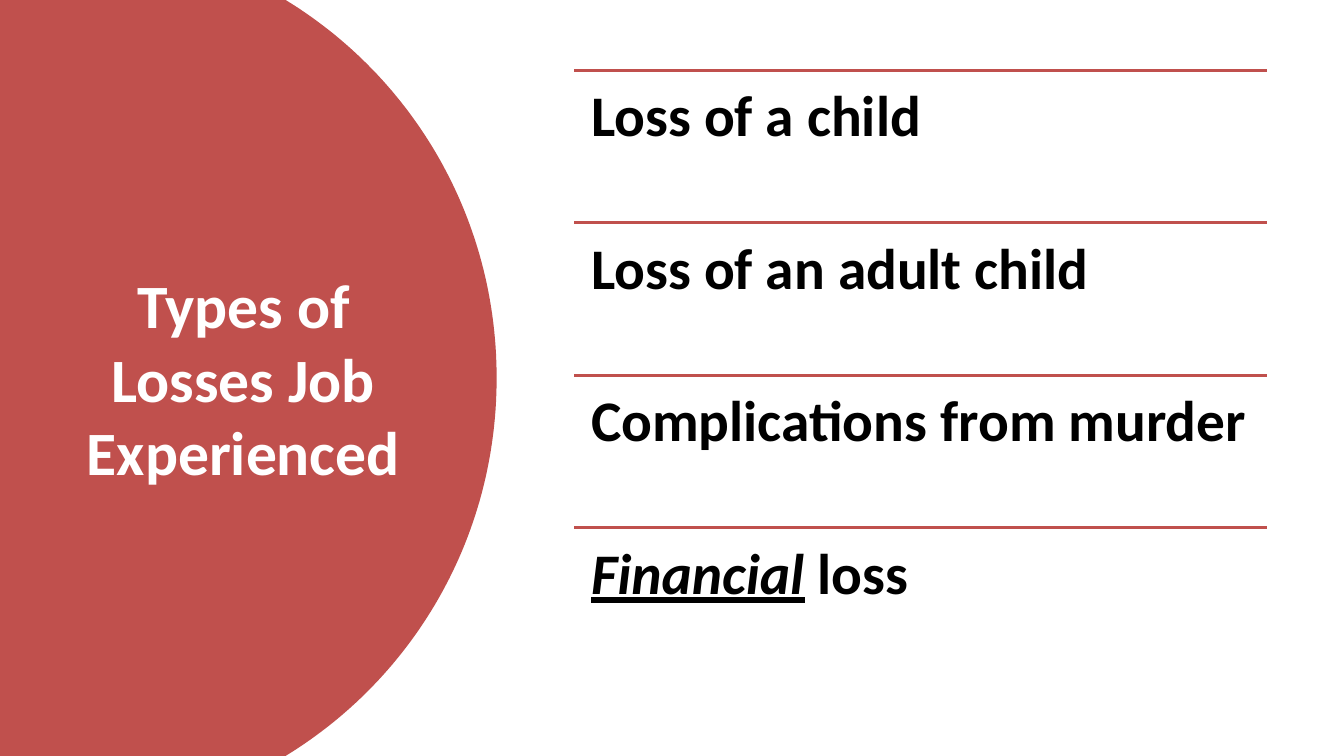
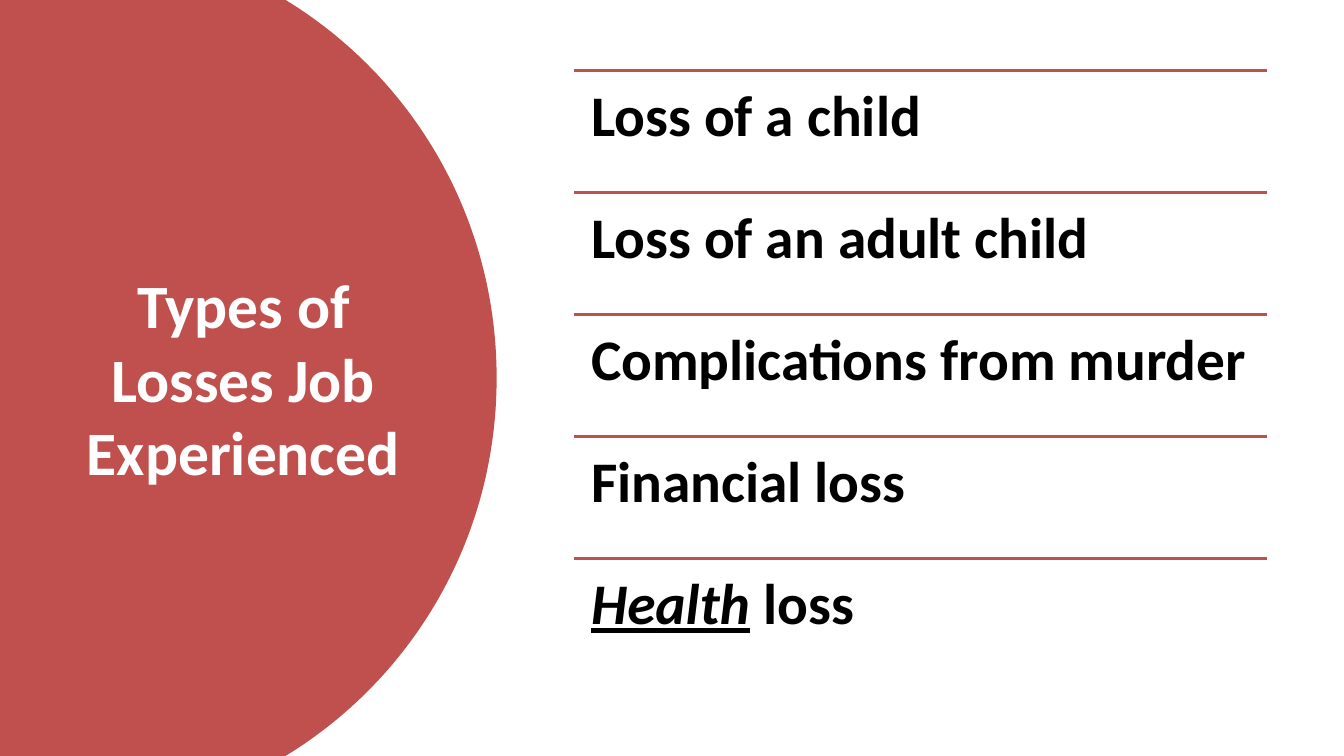
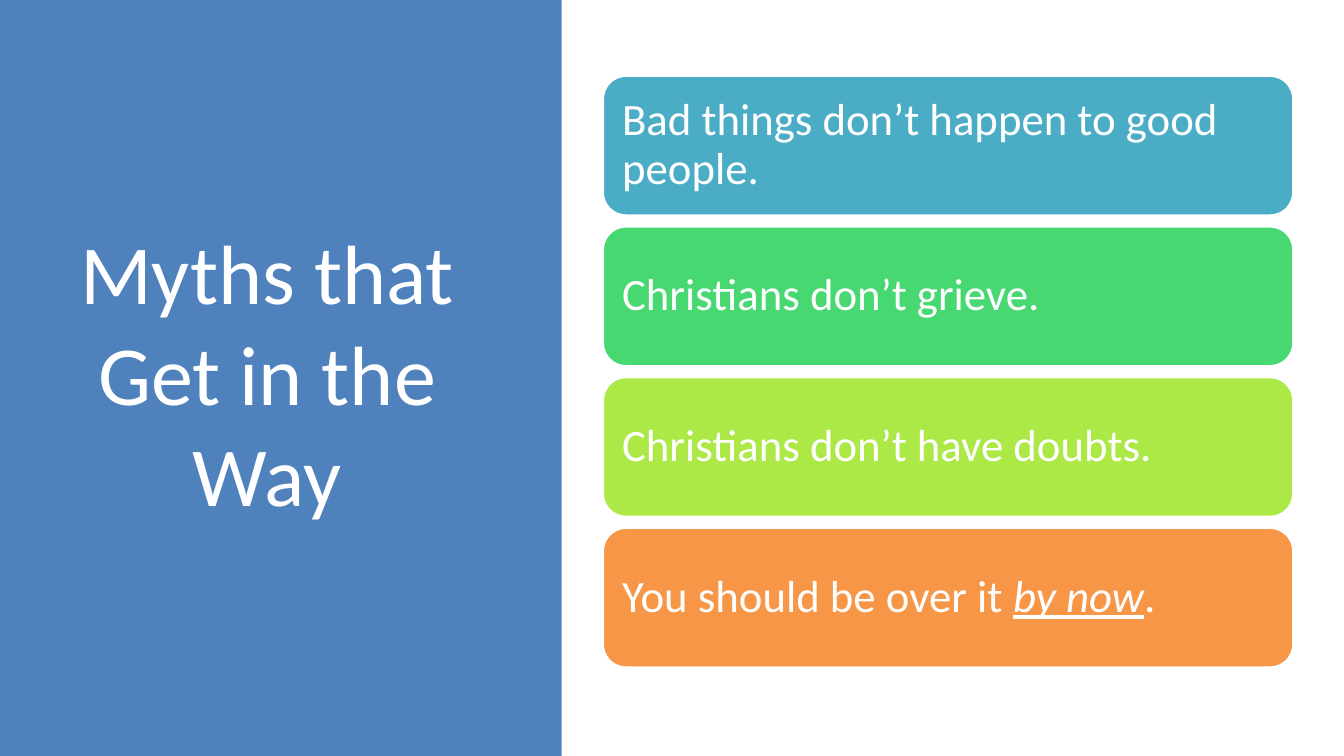
"""Builds three slides: two lists of losses beside a curved panel, and a set of myth cards."""
from lxml.etree import SubElement
from pptx import Presentation
from pptx.dml.color import RGBColor
from pptx.enum.shapes import MSO_CONNECTOR, MSO_SHAPE
from pptx.enum.text import MSO_ANCHOR, PP_ALIGN
from pptx.oxml.ns import qn
from pptx.util import Emu, Pt

LOSS_TITLE = "Types of Losses Job Experienced"
LOSS_LISTS = [
    ["Loss of a child", "Loss of an adult child", "Complications from murder", "*Financial* loss"],
    ["Loss of a child", "Loss of an adult child", "Complications from murder", "Financial loss",
     "*Health* loss"],
]
MYTH_TITLE = "Myths that Get in the Way"
MYTHS = [
    ("Bad things don’t happen to good people.", "teal"),
    ("Christians don’t grieve.", "green"),
    ("Christians don’t have doubts.", "lime"),
    ("You should be over it *by now*.", "orange"),
]

COLORS = {
    "red": "C0504D", "blue": "4F81BD", "teal": "4BACC6", "green": "47D872",
    "lime": "ACE946", "orange": "F79646", "white": "FFFFFF", "black": "000000",
}
FONT = "Calibri"
PX = 9525
W, H = 1280, 720
CURVE = [(272, 0), (393, 74), (473, 207), (473, 360)]
CURVE_STEPS = 60
LOSS_TITLE_BOX = (56, 67, 352, 585)
MYTH_TITLE_BOX = (55, 65, 399, 578)
LOSS_AREA = (547, 67, 660, 581)
MYTH_AREA = (574, 72, 658, 564)
CARD_GAP = 10
PANEL_W = 535


def px(*values):
    return [Emu(round(v * PX)) for v in values]


def color(name):
    return RGBColor.from_string(COLORS[name])


def write(sp, text, size, fill="white", bold=False, align=PP_ALIGN.LEFT,
          anchor=MSO_ANCHOR.MIDDLE, inset=(10, 5), spacing=None):
    tf = sp.text_frame
    tf.word_wrap = True
    tf.vertical_anchor = anchor
    tf.margin_left = tf.margin_right = px(inset[0])[0]
    tf.margin_top = tf.margin_bottom = px(inset[1])[0]
    p = tf.paragraphs[0]
    p.alignment = align
    p.line_spacing = spacing
    for i, part in enumerate(text.split("*")):
        if part:
            r = p.add_run()
            r.text = part
            font = r.font
            font.name, font.size, font.bold = FONT, Pt(size), bold
            font.color.rgb = color(fill)
            if i % 2:
                font.italic = font.underline = True


def paint(sp, fill, line=None):
    sp.shadow.inherit = False
    sp.fill.solid()
    sp.fill.fore_color.rgb = color(fill)
    if line:
        sp.line.color.rgb = color(line)
        sp.line.width = Pt(2)
    else:
        sp.line.fill.background()


def add_title(s, text, box, size, bold=False):
    write(s.shapes.add_textbox(*px(*box)), text, size, bold=bold, align=PP_ALIGN.CENTER)


def add_rule(s, x, y, w):
    rule = s.shapes.add_connector(MSO_CONNECTOR.STRAIGHT, *px(x, y, x + w, y))
    rule.line.color.rgb = color("red")
    rule.line.width = Pt(2)
    SubElement(rule._element.spPr, qn("a:effectLst"))


def bezier(t):
    weights = ((1 - t) ** 3, 3 * t * (1 - t) ** 2, 3 * t * t * (1 - t), t ** 3)
    return tuple(sum(k * pt[axis] for k, pt in zip(weights, CURVE)) for axis in (0, 1))


def add_curved_panel(s):
    upper = [bezier(i / CURVE_STEPS) for i in range(CURVE_STEPS + 1)]
    lower = [(x, H - y) for x, y in reversed(upper[:-1])]
    outline = s.shapes.build_freeform(0, 0, scale=1)
    outline.add_line_segments([px(*pt) for pt in upper + lower + [(0, H)]], close=True)
    paint(outline.convert_to_shape(), "red")


def loss_slide(s, losses):
    add_curved_panel(s)
    add_title(s, LOSS_TITLE, LOSS_TITLE_BOX, 44, bold=True)
    x, top, w, h = LOSS_AREA
    row_h = h / len(losses)
    for i, loss in enumerate(losses):
        y = top + i * row_h
        add_rule(s, x, y, w)
        write(s.shapes.add_textbox(*px(x, y, w, row_h)), loss, 41, fill="black", bold=True,
              anchor=MSO_ANCHOR.TOP, inset=(16, 16), spacing=0.9)


def myth_slide(s):
    paint(s.shapes.add_shape(MSO_SHAPE.RECTANGLE, *px(0, 0, PANEL_W, H)), "blue")
    add_title(s, MYTH_TITLE, MYTH_TITLE_BOX, 60)
    x, top, w, h = MYTH_AREA
    card_h = (h - CARD_GAP * (len(MYTHS) - 1)) / len(MYTHS)
    for i, (myth, fill) in enumerate(MYTHS):
        y = top + i * (card_h + CARD_GAP)
        card = s.shapes.add_shape(MSO_SHAPE.ROUNDED_RECTANGLE, *px(x, y, w, card_h))
        paint(card, fill, line="white")
        write(card, myth, 32, inset=(12, 12), spacing=0.9)


def main():
    prs = Presentation()
    prs.slide_width, prs.slide_height = px(W, H)
    blank = prs.slide_layouts[6]
    for losses in LOSS_LISTS:
        loss_slide(prs.slides.add_slide(blank), losses)
    myth_slide(prs.slides.add_slide(blank))
    prs.save("out.pptx")


if __name__ == "__main__":
    main()
